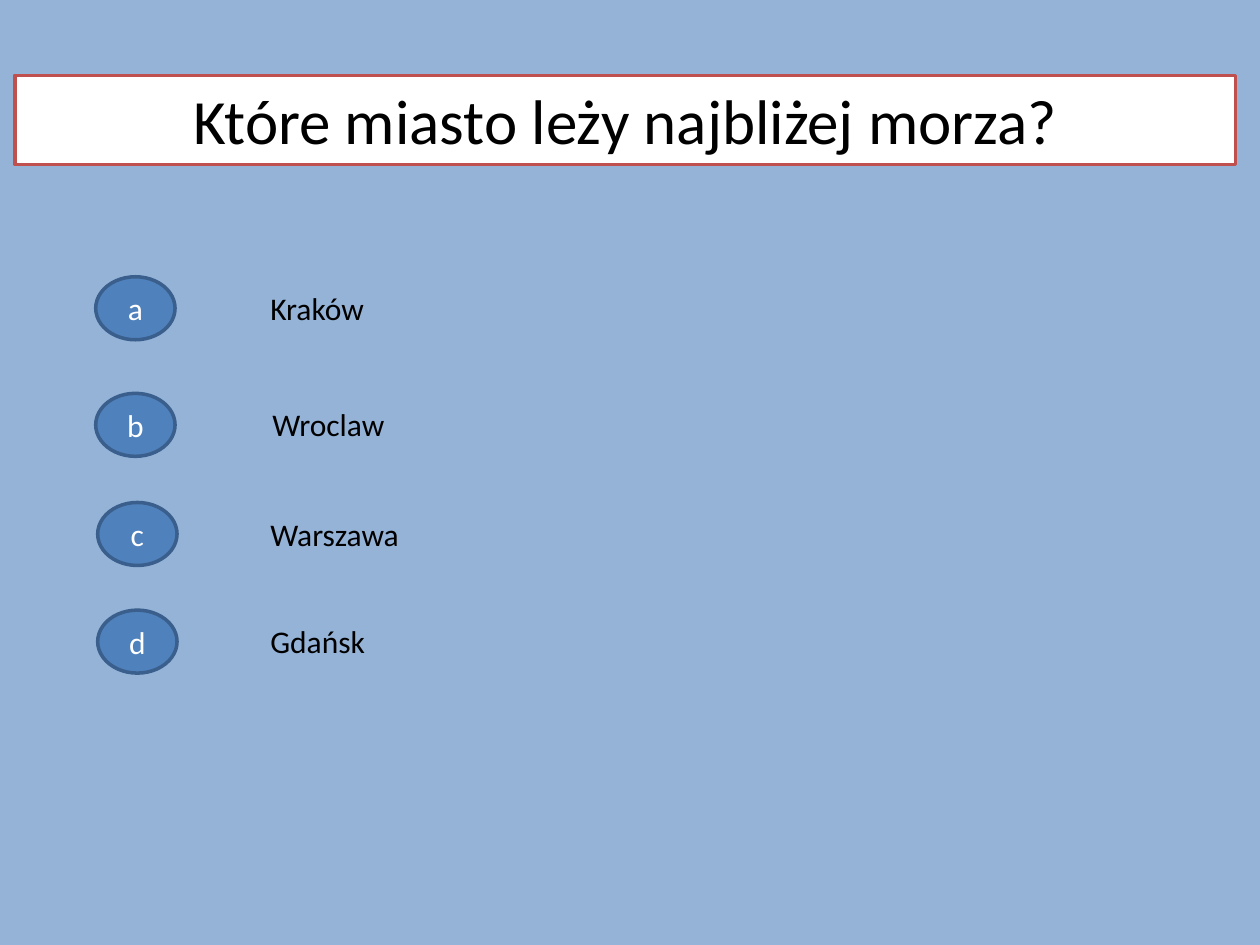
import pptx
import pptx.dml.color
import pptx.enum.shapes
import pptx.enum.text
import pptx.util

Cm = pptx.util.Cm
Pt = pptx.util.Pt
Shape = pptx.enum.shapes.MSO_SHAPE
Align = pptx.enum.text.PP_ALIGN
Anchor = pptx.enum.text.MSO_ANCHOR
AutoSize = pptx.enum.text.MSO_AUTO_SIZE


def color(code):
    return pptx.dml.color.RGBColor.from_string(code)


def write(box, text, size=18, ink="000000", align=Align.LEFT,
          anchor=Anchor.TOP, grow=True, font="Calibri"):
    frame = box.text_frame
    frame.word_wrap = True
    frame.vertical_anchor = anchor
    frame.auto_size = AutoSize.SHAPE_TO_FIT_TEXT if grow else AutoSize.NONE
    para = frame.paragraphs[0]
    para.alignment = align
    span = para.add_run()
    span.text = text
    span.font.name = font
    span.font.size = Pt(size)
    span.font.color.rgb = color(ink)


class QuizPage:
    background = "95B3D7"
    banner_fill, banner_line = "FFFFFF", "C0504D"
    badge_fill, badge_line, badge_ink = "4F81BD", "3A5F8C", "FFFFFF"

    def __init__(self, deck):
        self.page = deck.slides.add_slide(deck.slide_layouts[6])
        fill = self.page.background.fill
        fill.solid()
        fill.fore_color.rgb = color(self.background)

    def shape(self, kind, left, top, width, height, fill, line):
        box = self.page.shapes.add_shape(
            kind, Cm(left), Cm(top), Cm(width), Cm(height))
        box.shadow.inherit = False
        box.fill.solid()
        box.fill.fore_color.rgb = color(fill)
        box.line.color.rgb = color(line)
        box.line.width = Pt(2)
        return box

    def question(self, text):
        box = self.shape(Shape.RECTANGLE, 0.3, 1.52, 24.61, 1.8,
                         self.banner_fill, self.banner_line)
        write(box, text, size=36, align=Align.CENTER)

    def badge(self, letter, left, top):
        box = self.shape(Shape.OVAL, left, top, 1.6, 1.27,
                         self.badge_fill, self.badge_line)
        write(box, letter, ink=self.badge_ink, align=Align.CENTER,
              anchor=Anchor.MIDDLE, grow=False)

    def answer(self, text, left, top, width):
        box = self.page.shapes.add_textbox(
            Cm(left), Cm(top), Cm(width), Cm(1.03))
        write(box, text)


def main():
    deck = pptx.Presentation()
    deck.slide_width, deck.slide_height = Cm(25.4), Cm(19.05)
    quiz = QuizPage(deck)

    # Question banner
    quiz.question("Które miasto leży najbliżej morza?")

    # Answers: letter, badge left, row top, city, text left, text width
    answers = [
        ("a", 1.93, 5.58, "Kraków", 5.2, 3.12),
        ("b", 1.93, 7.93, "Wroclaw", 5.24, 2.95),
        ("c", 1.97, 10.13, "Warszawa", 5.2, 3.71),
        ("d", 1.97, 12.3, "Gdańsk", 5.2, 2.97),
    ]
    for letter, badge_left, top, city, text_left, width in answers:
        quiz.badge(letter, badge_left, top)
        quiz.answer(city, text_left, top + 0.12, width)

    deck.save("out.pptx")


if __name__ == "__main__":
    main()
